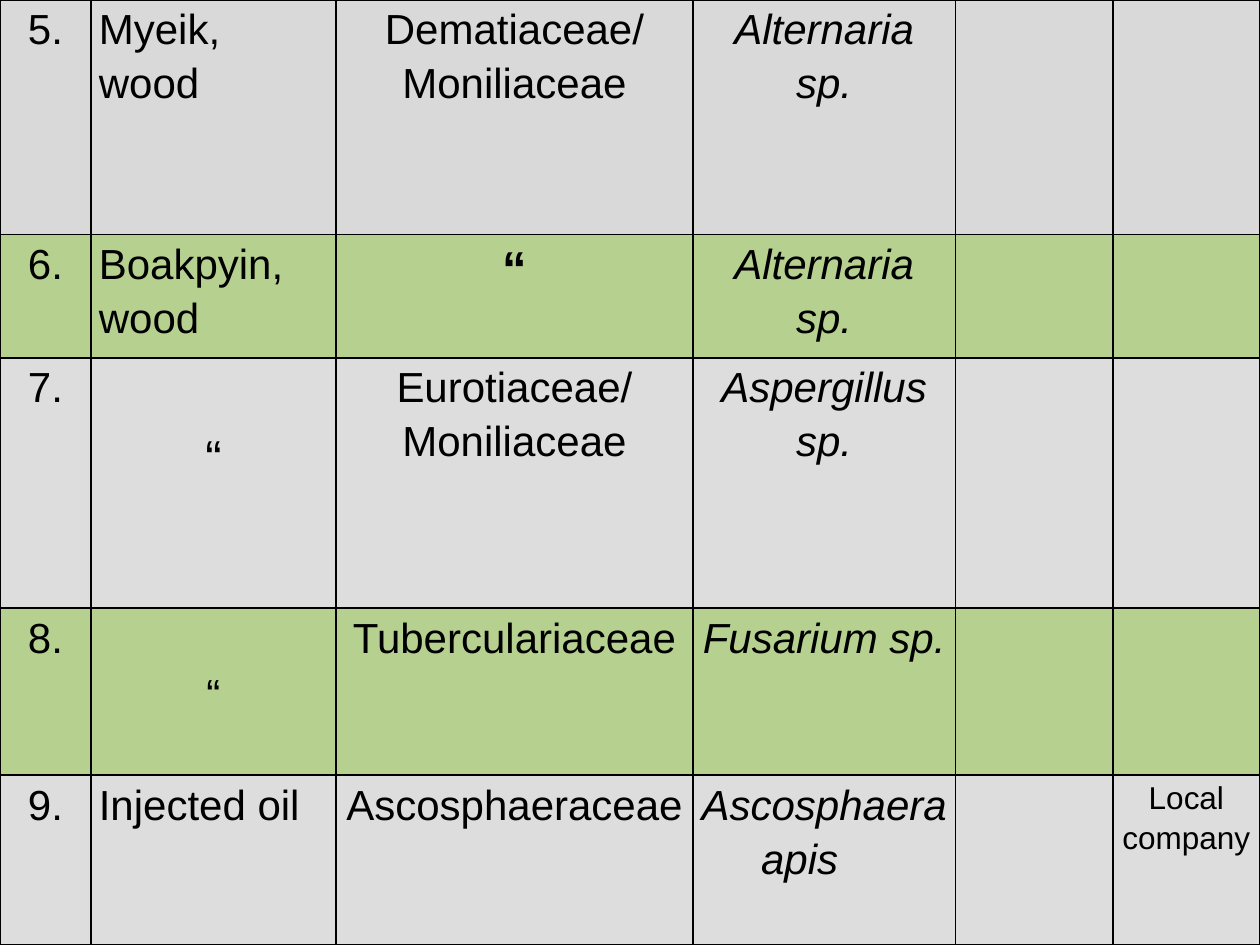
from dataclasses import dataclass

from lxml import etree
from pptx import Presentation
from pptx.dml.color import RGBColor
from pptx.enum.text import PP_ALIGN
from pptx.oxml.ns import qn
from pptx.util import Pt

LEFT, CENTER = PP_ALIGN.LEFT, PP_ALIGN.CENTER


@dataclass(frozen=True)
class Theme:
    font: str = "Arial"
    ink: str = "000000"
    silver: str = "D9D9D9"
    gray: str = "DDDDDD"
    green: str = "B6D090"
    body: int = 24
    ditto: int = 28
    small: int = 18
    line_spacing: float = 1.15
    side_margin: float = 4.5
    border: float = 1


THEME = Theme()
COLUMN_WIDTHS = (52, 140, 204, 150, 90, 84)

# Height, fill, then a (text, format) pair for each column that has text.
SAMPLES = (
    (134, THEME.silver, (
        ("5.", {}),
        ("Myeik, wood", {"align": LEFT}),
        ("Dematiaceae/ Moniliaceae", {}),
        ("Alternaria sp.", {"italic": True}))),
    (70.5, THEME.green, (
        ("6.", {}),
        ("Boakpyin, wood", {"align": LEFT}),
        ("“", {"size": THEME.ditto, "bold": True}),
        ("Alternaria sp.", {"italic": True}))),
    (143, THEME.gray, (
        ("7.", {}),
        ("“", {"size": THEME.ditto, "top": 37}),
        ("Eurotiaceae/\nMoniliaceae", {}),
        ("Aspergillus sp.", {"italic": True}))),
    (95.5, THEME.green, (
        ("8.", {}),
        ("“", {"top": 32}),
        ("Tuberculariaceae", {}),
        ("Fusarium sp.", {"italic": True}))),
    (97, THEME.gray, (
        ("9.", {}),
        ("Injected oil", {"align": LEFT}),
        ("Ascosphaeraceae", {}),
        ("Ascosphaera apis\t", {"italic": True}),
        ("", {}),
        ("Local company", {"size": THEME.small}))),
)


def write_text(cell, text, size=THEME.body, align=CENTER, bold=False,
               italic=False, top=0):
    """Write one paragraph per line of text, starting `top` points down."""
    cell.margin_top = Pt(top)
    frame = cell.text_frame
    for index, line in enumerate(text.split("\n")):
        paragraph = frame.paragraphs[0] if index == 0 else frame.add_paragraph()
        paragraph.alignment = align
        paragraph.line_spacing = THEME.line_spacing
        run = paragraph.add_run()
        run.text = line
        run.font.name = THEME.font
        run.font.size = Pt(size)
        run.font.bold = bold
        run.font.italic = italic
        run.font.color.rgb = RGBColor.from_string(THEME.ink)


def style_cell(cell, fill):
    cell.margin_left = cell.margin_right = Pt(THEME.side_margin)
    cell.margin_top = cell.margin_bottom = 0
    properties = cell._tc.get_or_add_tcPr()
    for side in ("a:lnL", "a:lnR", "a:lnT", "a:lnB"):
        line = etree.SubElement(properties, qn(side), w=str(Pt(THEME.border)))
        solid = etree.SubElement(line, qn("a:solidFill"))
        etree.SubElement(solid, qn("a:srgbClr"), val=THEME.ink)
    cell.fill.solid()
    cell.fill.fore_color.rgb = RGBColor.from_string(fill)


def add_sample_table(slide, left, top, width, height):
    """Fill the box with the samples, keeping the column and row proportions."""
    table = slide.shapes.add_table(
        len(SAMPLES), len(COLUMN_WIDTHS),
        Pt(left), Pt(top), Pt(width), Pt(height)).table
    table.first_row = table.horz_banding = False
    x_scale = width / sum(COLUMN_WIDTHS)
    y_scale = height / sum(sample[0] for sample in SAMPLES)
    for column, column_width in zip(table.columns, COLUMN_WIDTHS):
        column.width = Pt(column_width * x_scale)
    for row, (row_height, fill, entries) in zip(table.rows, SAMPLES):
        row.height = Pt(row_height * y_scale)
        for cell in row.cells:
            style_cell(cell, fill)
        for cell, (text, text_format) in zip(row.cells, entries):
            if text:
                write_text(cell, text, **text_format)


def main():
    presentation = Presentation()
    presentation.slide_width, presentation.slide_height = Pt(720), Pt(540)
    slide = presentation.slides.add_slide(presentation.slide_layouts[6])
    add_sample_table(slide, 0, 0, 720, 540)
    presentation.save("out.pptx")


if __name__ == "__main__":
    main()
